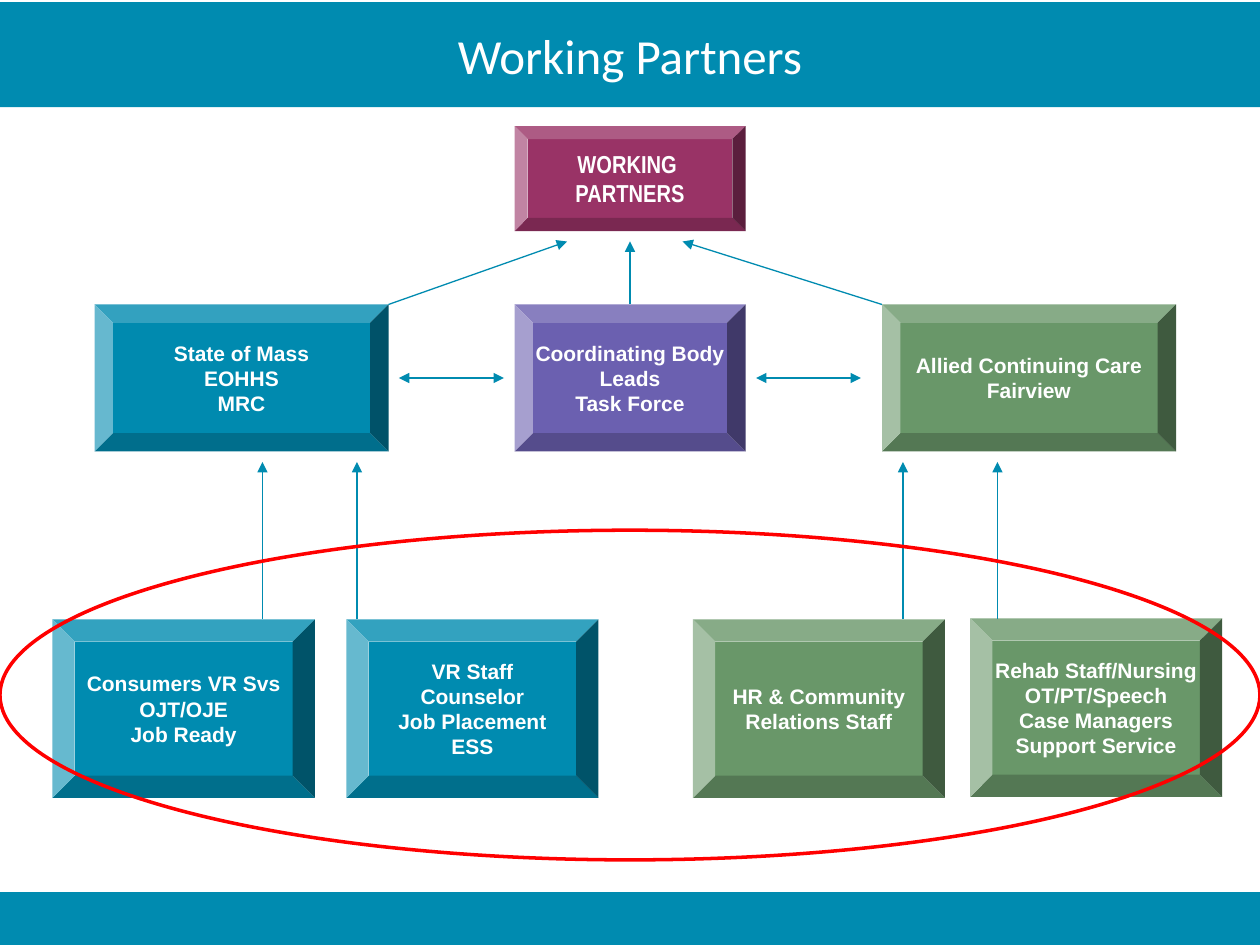
"""Build the Working Partners organisation slide on a grid of twelfths of an inch."""
from lxml import etree
from pptx import Presentation
from pptx.dml.color import RGBColor
from pptx.enum.shapes import MSO_CONNECTOR, MSO_SHAPE
from pptx.enum.text import MSO_ANCHOR, PP_ALIGN
from pptx.oxml.ns import qn
from pptx.util import Inches, Pt

RECTANGLE, BEVEL, OVAL = MSO_SHAPE.RECTANGLE, MSO_SHAPE.BEVEL, MSO_SHAPE.OVAL
STRAIGHT = MSO_CONNECTOR.STRAIGHT
MIDDLE, CENTER = MSO_ANCHOR.MIDDLE, PP_ALIGN.CENTER

COLUMNS, ROWS = 120, 90
TEAL, PURPLE, GREEN, PLUM = "008BB0", "6B60B0", "699769", "993366"
WHITE, RED = "FFFFFF", "FF0000"

TITLE = "Working Partners"
HEAD = ["WORKING ", "PARTNERS"]
PARTNERS = [
    (9, 28, "008AAF", ["State of Mass", "EOHHS", "MRC"]),
    (49, 22, PURPLE, ["Coordinating Body", "Leads", "Task Force"]),
    (84, 28, GREEN, ["Allied Continuing Care", "Fairview"]),
]
TEAMS = [
    (5, 59, 25, TEAL, ["Consumers VR Svs", "OJT/OJE", "Job Ready"]),
    (33, 59, 24, TEAL, ["VR Staff", "Counselor", "Job Placement", "ESS"]),
    (66, 59, 24, GREEN, ["HR & Community", "Relations Staff"]),
    (92.4, 58.9, 24, GREEN,
     ["Rehab Staff/Nursing", "OT/PT/Speech", "Case Managers", "Support Service"]),
]
PARTNER_TOP, PARTNER_HEIGHT, TEAM_TOP, TEAM_HEIGHT = 29, 14, 59, 17
TEAM_ARROWS = [25, 34, 86, 95]
HEAD_ARROWS = [(37, 54), (60, 60), (84, 65)]
SIDE_ARROWS = [(38, 48), (72, 82)]


def grid(units):
    return Inches(units / 12)


def color(hex_string):
    return RGBColor.from_string(hex_string)


def add_box(slide, kind, left, top, width, height, fill=None, line=None, weight=0.75):
    shape = slide.shapes.add_shape(kind, *map(grid, (left, top, width, height)))
    shape.shadow.inherit = False
    if fill:
        shape.fill.solid()
        shape.fill.fore_color.rgb = color(fill)
    else:
        shape.fill.background()
    if line:
        shape.line.color.rgb = color(line)
        shape.line.width = Pt(weight)
    else:
        shape.line.fill.background()
    return shape


def write(shape, lines, size, font="Arial", bold=True, wrap=False):
    frame = shape.text_frame
    frame.text = "\n".join(lines)
    frame.word_wrap = wrap
    frame.vertical_anchor = MIDDLE
    for paragraph in frame.paragraphs:
        paragraph.alignment = CENTER
        for run in paragraph.runs:
            run.font.name = font
            run.font.size = Pt(size)
            run.font.bold = bold
            run.font.color.rgb = color(WHITE)


def add_arrow(slide, start, tip, both=False):
    connector = slide.shapes.add_connector(STRAIGHT, *map(grid, start + tip))
    connector.line.color.rgb = color(TEAL)
    connector.line.width = Pt(0.75)
    outline = connector.line._get_or_add_ln()
    for end in ["headEnd", "tailEnd"] if both else ["tailEnd"]:
        etree.SubElement(outline, qn(f"a:{end}"), type="triangle")
    etree.SubElement(connector._element.spPr, qn("a:effectLst"))


def main():
    presentation = Presentation()
    presentation.slide_width, presentation.slide_height = grid(COLUMNS), grid(ROWS)
    slide = presentation.slides.add_slide(presentation.slide_layouts[6])

    add_box(slide, RECTANGLE, 0, ROWS - 5, COLUMNS, 5, TEAL, TEAL)
    banner = add_box(slide, RECTANGLE, 0, 0.2, COLUMNS, 10, TEAL)
    write(banner, [TITLE], 28, "Calibri", bold=False, wrap=True)

    write(add_box(slide, BEVEL, 49, 12, 22, 10, PLUM), HEAD, 14, "Arial Narrow")
    for left, width, fill, lines in PARTNERS:
        box = add_box(slide, BEVEL, left, PARTNER_TOP, width, PARTNER_HEIGHT, fill)
        write(box, lines, 12)
    for left, top, width, fill, lines in TEAMS:
        write(add_box(slide, BEVEL, left, top, width, TEAM_HEIGHT, fill), lines, 12)

    for column in TEAM_ARROWS:
        add_arrow(slide, (column, TEAM_TOP), (column, PARTNER_TOP + PARTNER_HEIGHT + 1))
    for start, tip in HEAD_ARROWS:
        add_arrow(slide, (start, PARTNER_TOP), (tip, 23))
    for start, tip in SIDE_ARROWS:
        add_arrow(slide, (start, 36), (tip, 36), both=True)

    add_box(slide, OVAL, 0, 50.5, COLUMNS, 31.4, line=RED, weight=2)
    presentation.save("out.pptx")


if __name__ == "__main__":
    main()
